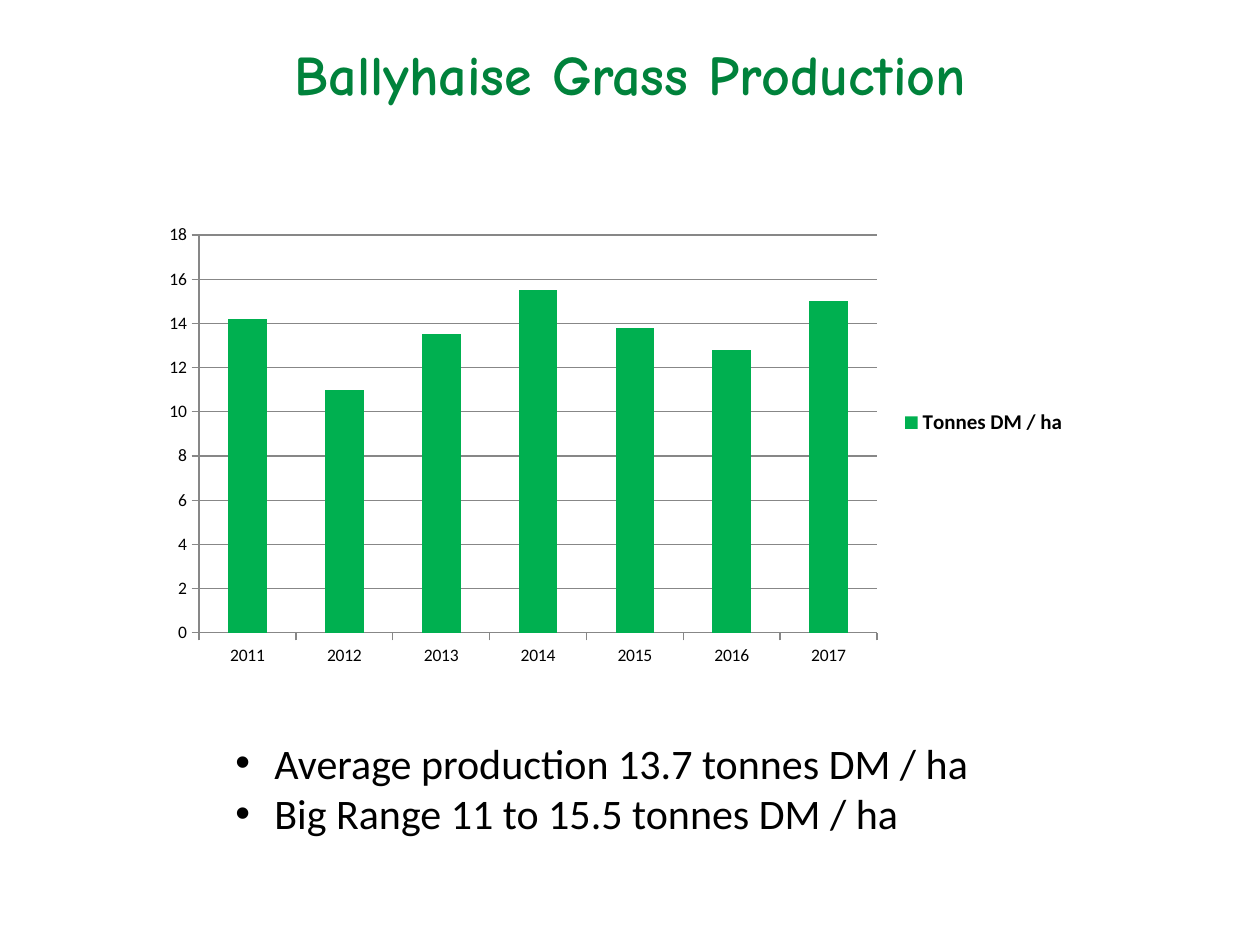
from lxml import etree
from pptx import Presentation
from pptx.chart.data import CategoryChartData
from pptx.dml.color import RGBColor
from pptx.enum.chart import XL_CHART_TYPE, XL_LEGEND_POSITION, XL_TICK_MARK
from pptx.enum.text import MSO_ANCHOR, PP_ALIGN
from pptx.oxml import parse_xml
from pptx.oxml.ns import nsdecls, qn
from pptx.util import Inches, Pt

COLUMN = XL_CHART_TYPE.COLUMN_CLUSTERED
RIGHT = XL_LEGEND_POSITION.RIGHT
OUTSIDE = XL_TICK_MARK.OUTSIDE
NONE = XL_TICK_MARK.NONE
MIDDLE, TOP = MSO_ANCHOR.MIDDLE, MSO_ANCHOR.TOP
CENTER, LEFT = PP_ALIGN.CENTER, PP_ALIGN.LEFT

# Content
TITLE = "Ballyhaise Grass Production"
SERIES = "Tonnes DM / ha"
YIELDS = {"2011": 14.2, "2012": 11, "2013": 13.5, "2014": 15.5,
          "2015": 13.8, "2016": 12.8, "2017": 15}
FINDINGS = ["Average production 13.7 tonnes DM / ha",
            "Big Range 11 to 15.5 tonnes DM / ha"]

# Places in inches: left, top, width, height
TITLE_BOX = (0.2, 0.33, 9.61, 0.5)
CHART_BOX = (1.22, 1.31, 7.35, 4.09)
FINDINGS_BOX = (1.77, 5.8, 6.07, 0.91)
PLOT = {"x": 0.049, "y": 0.136, "w": 0.732, "h": 0.772}  # shares of the chart
INDENT = Inches(0.31)


def rgb(color):
    return RGBColor.from_string(color)


def set_font(font, name, size, color, bold=False):
    font.name, font.size, font.bold = name, Pt(size), bold
    font.color.rgb = rgb(color)


def add_text(slide, box, lines, anchor, align, wrap, font):
    tf = slide.shapes.add_textbox(*map(Inches, box)).text_frame
    tf.word_wrap, tf.vertical_anchor = wrap, anchor
    tf.text = "\n".join(lines)
    for p in tf.paragraphs:
        p.alignment = align
        set_font(p.font, *font)
    return tf


def add_bullet(p):
    pPr = p._p.get_or_add_pPr()
    pPr.set("marL", str(INDENT))
    pPr.set("indent", str(-INDENT))
    bullet = parse_xml(f'<a:buChar {nsdecls("a")} char="•"/>')
    face = parse_xml(f'<a:buFont {nsdecls("a")} typeface="Arial"/>')
    pPr.insert(0, face)
    pPr.insert(1, bullet)


def place_plot(chart):
    plot_area = chart._chartSpace.chart.plotArea
    for old in plot_area.findall(qn("c:layout")):
        plot_area.remove(old)
    layout = parse_xml(f'<c:layout {nsdecls("c")}><c:manualLayout/></c:layout>')
    settings = [("layoutTarget", "inner"), ("xMode", "edge"), ("yMode", "edge")]
    for tag, value in settings + list(PLOT.items()):
        etree.SubElement(layout[0], qn(f"c:{tag}")).set("val", str(value))
    plot_area.insert(0, layout)


prs = Presentation()
prs.slide_width, prs.slide_height = Inches(10), Inches(7.5)
slide = prs.slides.add_slide(prs.slide_layouts[6])

# Title
add_text(slide, TITLE_BOX, [TITLE], MIDDLE, CENTER, True,
         ("Comic Neue", 32, "00823B", True))

# Yield chart
data = CategoryChartData()
data.categories = list(YIELDS)
data.add_series(SERIES, list(YIELDS.values()))
chart = slide.shapes.add_chart(COLUMN, *map(Inches, CHART_BOX), data).chart
set_font(chart.font, "Calibri", 10, "000000")
chart.has_title = False
place_plot(chart)

plot = chart.plots[0]
plot.gap_width, plot.vary_by_categories = 150, False
fill = plot.series[0].format.fill
fill.solid()
fill.fore_color.rgb = rgb("00B050")

values = chart.value_axis
values.minimum_scale, values.maximum_scale, values.major_unit = 0, 18, 2
values.has_major_gridlines = True
for axis in (chart.category_axis, values):
    axis.major_tick_mark, axis.minor_tick_mark = OUTSIDE, NONE
for part in (chart.category_axis, values, values.major_gridlines):
    part.format.line.color.rgb = rgb("878787")
    part.format.line.width = Pt(0.75)

chart.has_legend = True
chart.legend.position, chart.legend.include_in_layout = RIGHT, False
set_font(chart.legend.font, "Calibri", 12, "000000", True)

# Findings
tf = add_text(slide, FINDINGS_BOX, FINDINGS, TOP, LEFT, False,
              ("Calibri", 24, "000000"))
for p in tf.paragraphs:
    add_bullet(p)

prs.save("out.pptx")
